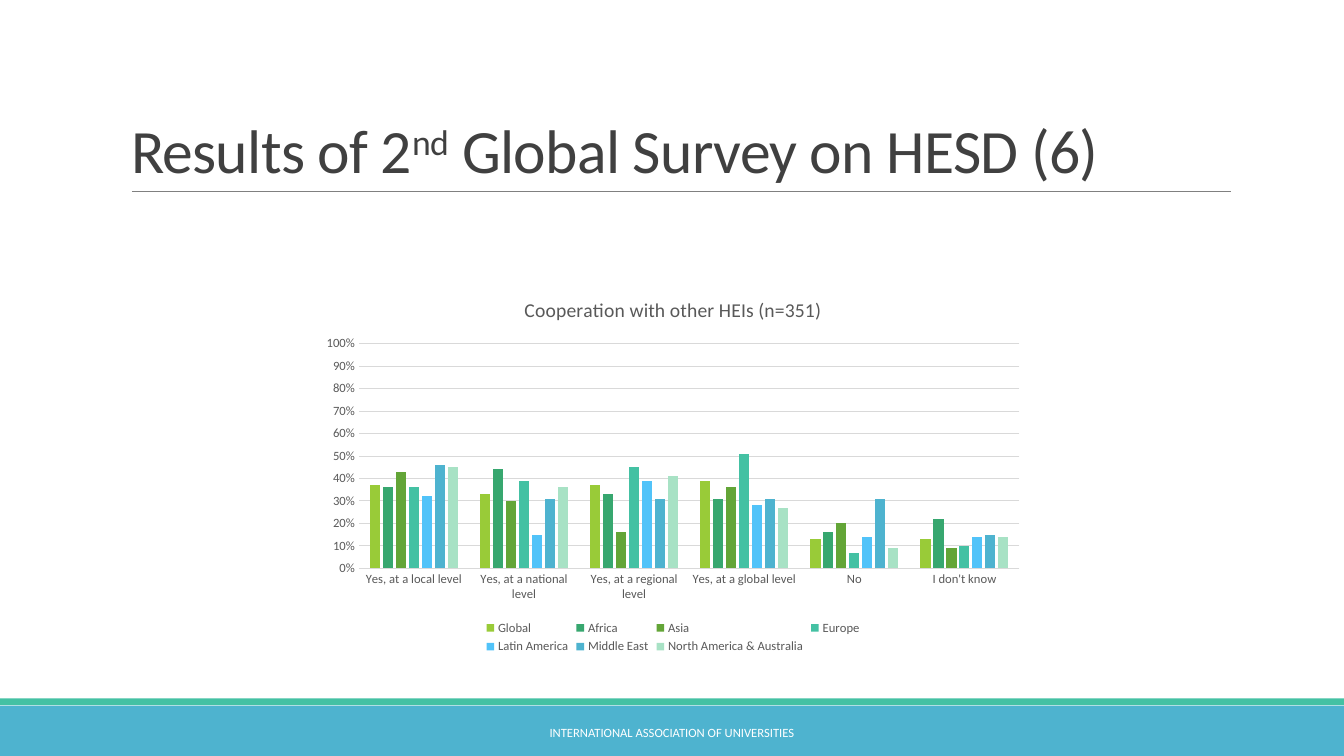
from lxml import etree
from pptx import Presentation
from pptx import util as u
from pptx.chart import data
from pptx.dml import color
from pptx.enum import chart as ce, shapes, text
from pptx.oxml import ns

COLORS = {
    "footer": "4EB3CF", "band": "44C1A3", "rule": "808080", "title": "404040",
    "white": "FFFFFF", "label": "595959", "grid": "D9D9D9",
}
CATEGORIES = [
    "Yes, at a local level", "Yes, at a national level",
    "Yes, at a regional level", "Yes, at a global level",
    "No", "I don't know",
]
REGIONS = [
    ("Global", "99CB38", (0.37, 0.33, 0.37, 0.39, 0.13, 0.13)),
    ("Africa", "37A76F", (0.36, 0.44, 0.33, 0.31, 0.16, 0.22)),
    ("Asia", "63A537", (0.43, 0.30, 0.16, 0.36, 0.20, 0.09)),
    ("Europe", "44C1A3", (0.36, 0.39, 0.45, 0.51, 0.07, 0.10)),
    ("Latin America", "51C3F9", (0.32, 0.15, 0.39, 0.28, 0.14, 0.14)),
    ("Middle East", "4EB3CF", (0.46, 0.31, 0.31, 0.31, 0.31, 0.15)),
    ("North America & Australia", "A8E2C5",
     (0.45, 0.36, 0.41, 0.27, 0.09, 0.14)),
]


def rgb(value):
    """Turn a hex string into a colour."""
    return color.RGBColor.from_string(value)


class SlideBuilder:
    """Draw styled elements on the current slide."""

    def __init__(self, slide, font="Calibri"):
        """Keep the slide and its typeface."""
        self.slide = slide
        self.font = font

    def style(self, font, size, name):
        """Apply typeface, size and a named colour."""
        font.name = self.font
        font.size = u.Pt(size)
        font.bold = False
        font.color.rgb = rgb(COLORS[name])

    def bar(self, x, y, w, h, name):
        """Add a plain filled rectangle."""
        sp = self.slide.shapes.add_shape(
            shapes.MSO_SHAPE.RECTANGLE, *map(u.Pt, (x, y, w, h)))
        sp.shadow.inherit = False
        sp.fill.solid()
        sp.fill.fore_color.rgb = rgb(COLORS[name])
        sp.line.fill.background()

    def rule(self, x1, x2, y, name):
        """Add a thin horizontal line."""
        line = self.slide.shapes.add_connector(
            shapes.MSO_CONNECTOR.STRAIGHT, *map(u.Pt, (x1, y, x2, y)))
        line.line.color.rgb = rgb(COLORS[name])
        line.line.width = u.Pt(0.5)
        etree.SubElement(line._element.spPr, ns.qn("a:effectLst"))

    def title(self, x, y, w, h, parts):
        """Fill the title from (text, baseline) parts."""
        sp = self.slide.shapes.title
        sp.left, sp.top, sp.width, sp.height = map(u.Pt, (x, y, w, h))
        tf = sp.text_frame
        tf.word_wrap = True
        tf.auto_size = text.MSO_AUTO_SIZE.NONE
        tf.vertical_anchor = text.MSO_ANCHOR.BOTTOM
        p = tf.paragraphs[0]
        p.alignment = text.PP_ALIGN.LEFT
        p.line_spacing = 0.85
        p.space_before = u.Pt(0)
        for words, baseline in parts:
            r = p.add_run()
            r.text = words
            self.style(r.font, 44, "title")
            props = r._r.get_or_add_rPr()
            props.set("spc", "-50")
            props.set("baseline", str(baseline * 1000))

    def label(self, x, y, w, h, words, size, name):
        """Add a centred text box."""
        tf = self.slide.shapes.add_textbox(
            *map(u.Pt, (x, y, w, h))).text_frame
        tf.word_wrap = True
        tf.vertical_anchor = text.MSO_ANCHOR.MIDDLE
        p = tf.paragraphs[0]
        p.text = words
        p.alignment = text.PP_ALIGN.CENTER
        self.style(p.runs[0].font, size, name)

    def axis(self, axis):
        """Style the labels and ticks of one axis."""
        axis.major_tick_mark = axis.minor_tick_mark = ce.XL_TICK_MARK.NONE
        self.style(axis.tick_labels.font, 9, "label")

    def columns(self, x, y, w, h, heading, categories, series):
        """Add a clustered column chart of percentages."""
        chart_data = data.CategoryChartData(number_format="0%")
        chart_data.categories = categories
        for name, _, values in series:
            chart_data.add_series(name, values)
        chart = self.slide.shapes.add_chart(
            ce.XL_CHART_TYPE.COLUMN_CLUSTERED, *map(u.Pt, (x, y, w, h)),
            chart_data).chart
        self.style(chart.font, 10, "label")
        chart.has_title = True
        tf = chart.chart_title.text_frame
        tf.text = heading
        self.style(tf.paragraphs[0].runs[0].font, 14, "label")
        chart.chart_title.include_in_layout = False

        chart.has_legend = True
        chart.legend.position = ce.XL_LEGEND_POSITION.BOTTOM
        chart.legend.include_in_layout = False
        self.style(chart.legend.font, 9, "label")

        plot = chart.plots[0]
        plot.gap_width, plot.overlap = 219, -27
        plot.vary_by_categories = False
        for column, (_, fill, _) in zip(plot.series, series):
            column.format.fill.solid()
            column.format.fill.fore_color.rgb = rgb(fill)

        cat, val = chart.category_axis, chart.value_axis
        self.axis(cat)
        self.axis(val)
        val.minimum_scale, val.maximum_scale, val.major_unit = 0, 1, 0.1
        val.tick_labels.number_format = "0%"
        val.tick_labels.number_format_is_linked = False
        val.format.line.fill.background()
        val.has_major_gridlines = True
        for line in (cat.format.line, val.major_gridlines.format.line):
            line.color.rgb = rgb(COLORS["grid"])
            line.width = u.Pt(0.75)


def main():
    """Build the survey slide and save it."""
    prs = Presentation()
    prs.slide_width, prs.slide_height = u.Pt(960), u.Pt(540)
    s = SlideBuilder(prs.slides.add_slide(prs.slide_layouts[5]))
    s.bar(0, 504, 960, 36, "footer")
    s.rule(94.3, 879.1, 136.8, "rule")
    s.bar(0, 498.8, 960, 5, "band")
    s.title(86.4, 22.5, 792, 114.3, [
        ("Results of 2", 0), ("nd", 30), (" Global Survey on HESD (6)", 0)])
    s.label(290.2, 508.6, 379.4, 28.8,
            "INTERNATIONAL ASSOCIATION OF UNIVERSITIES", 9, "white")
    s.columns(223, 200, 515.5, 270, "Cooperation with other HEIs (n=351)",
              CATEGORIES, REGIONS)
    prs.save("out.pptx")


if __name__ == "__main__":
    main()
